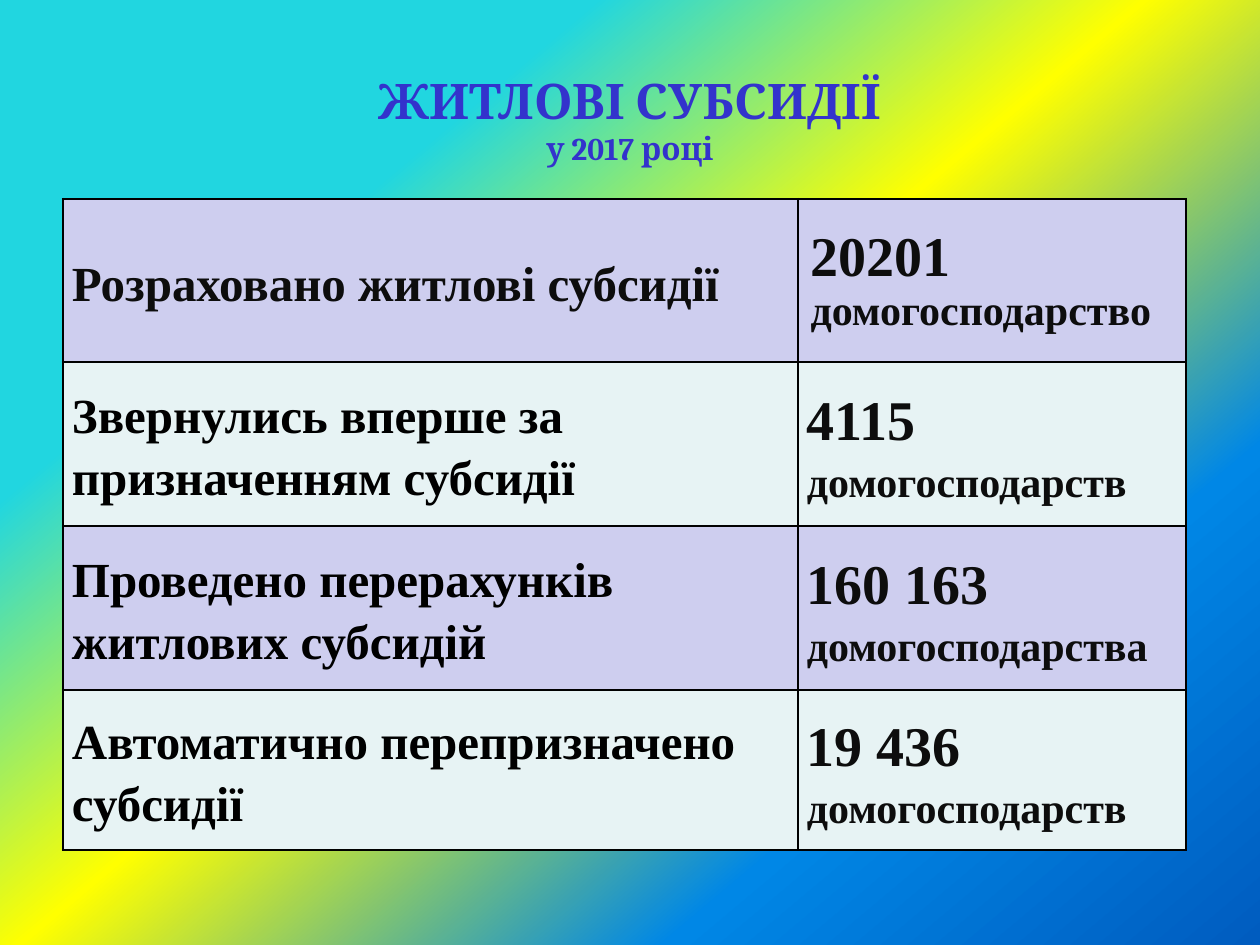
from lxml import etree
from pptx import Presentation
from pptx.dml.color import RGBColor as RGB
from pptx.enum.text import MSO_ANCHOR as ANCHOR, PP_ALIGN as ALIGN
from pptx.oxml import parse_xml
from pptx.oxml.ns import nsdecls, qn
from pptx.util import Pt

PX = 914400 // 126
COLORS = {"title": "3333CC", "ink": "0D0D0D", "black": "000000",
          "lilac": "CECEEF", "mint": "E7F3F4"}


def add_run(p, text, size, color, font="Times New Roman"):
    r = p.add_run()
    r.text = text
    for name, value in {"size": Pt(size), "bold": True, "name": font}.items():
        setattr(r.font, name, value)
    r.font.color.rgb = RGB.from_string(COLORS[color])


prs = Presentation()
prs.slide_width, prs.slide_height = 1260 * PX, 945 * PX
s = prs.slides.add_slide(prs.slide_layouts[6])

# Gradient background
stops = [(0, "21D6E0"), (25, "21D6E0"), (48, "FFFF00"), (75, "0087E6"), (100, "005CBF")]
gs = "".join(f'<a:gs pos="{pos * 1000}"><a:srgbClr val="{c}"/></a:gs>' for pos, c in stops)
s.background.fill.solid()
bg = s.background._cSld.bg.bgPr
bg.replace(bg.find(qn("a:solidFill")), parse_xml(
    f'<a:gradFill rotWithShape="1" {nsdecls("a")}><a:gsLst>{gs}</a:gsLst>'
    f'<a:lin ang="{50 * 60000}" scaled="0"/></a:gradFill>'))

# Title
sp = s.shapes.add_textbox(63 * PX, 38 * PX, 1134 * PX, 161 * PX)
tf = sp.text_frame
tf.word_wrap = True
tf.vertical_anchor = ANCHOR.MIDDLE
p = tf.paragraphs[0]
p.alignment = ALIGN.CENTER
add_run(p, "ЖИТЛОВІ СУБСИДІЇ", 28, "title", "Cambria")
p.add_line_break()
add_run(p, "у 2017 році", 18, "title", "Cambria")

# Table: label, then number and unit
rows = [
    ("Розраховано житлові субсидії", "20201", " домогосподарство"),
    ("Звернулись вперше за призначенням субсидії", "4115 ", "домогосподарств"),
    ("Проведено перерахунків житлових субсидій", "160 163 ", "домогосподарства"),
    ("Автоматично перепризначено субсидії", "19 436 ", "домогосподарств"),
]
heights = [163, 164, 164, 160]
widths = [735, 388]
table = s.shapes.add_table(len(rows), len(widths), 63 * PX, 199 * PX,
                           sum(widths) * PX, sum(heights) * PX).table
for col, width in zip(table.columns, widths):
    col.width = width * PX
for row, height in zip(table.rows, heights):
    row.height = height * PX

for i, (label, number, unit) in enumerate(rows):
    contents = [[(label, 28, "black" if i else "ink")],
                [(number, 32, "ink"), (unit, 24, "ink")]]
    for j, runs in enumerate(contents):
        cell = table.cell(i, j)
        cell.vertical_anchor = ANCHOR.MIDDLE
        p = cell.text_frame.paragraphs[0]
        # The first number keeps the default margins and single spacing
        if (i, j) != (0, 1):
            p.line_spacing = 1.15
            for name, value in {"margin_left": 9 * PX, "margin_right": 9 * PX,
                                "margin_top": 0, "margin_bottom": 0}.items():
                setattr(cell, name, value)
        for text, size, color in runs:
            add_run(p, text, size, color)

        # Borders come before the fill in the cell properties
        tcPr = cell._tc.get_or_add_tcPr()
        for side in ("lnL", "lnR", "lnT", "lnB"):
            ln = etree.SubElement(tcPr, qn(f"a:{side}"), w=str(Pt(1.5)))
            line_fill = etree.SubElement(ln, qn("a:solidFill"))
            etree.SubElement(line_fill, qn("a:srgbClr"), val=COLORS["black"])
        cell.fill.solid()
        cell.fill.fore_color.rgb = RGB.from_string(COLORS["mint" if i % 2 else "lilac"])

prs.save("out.pptx")
